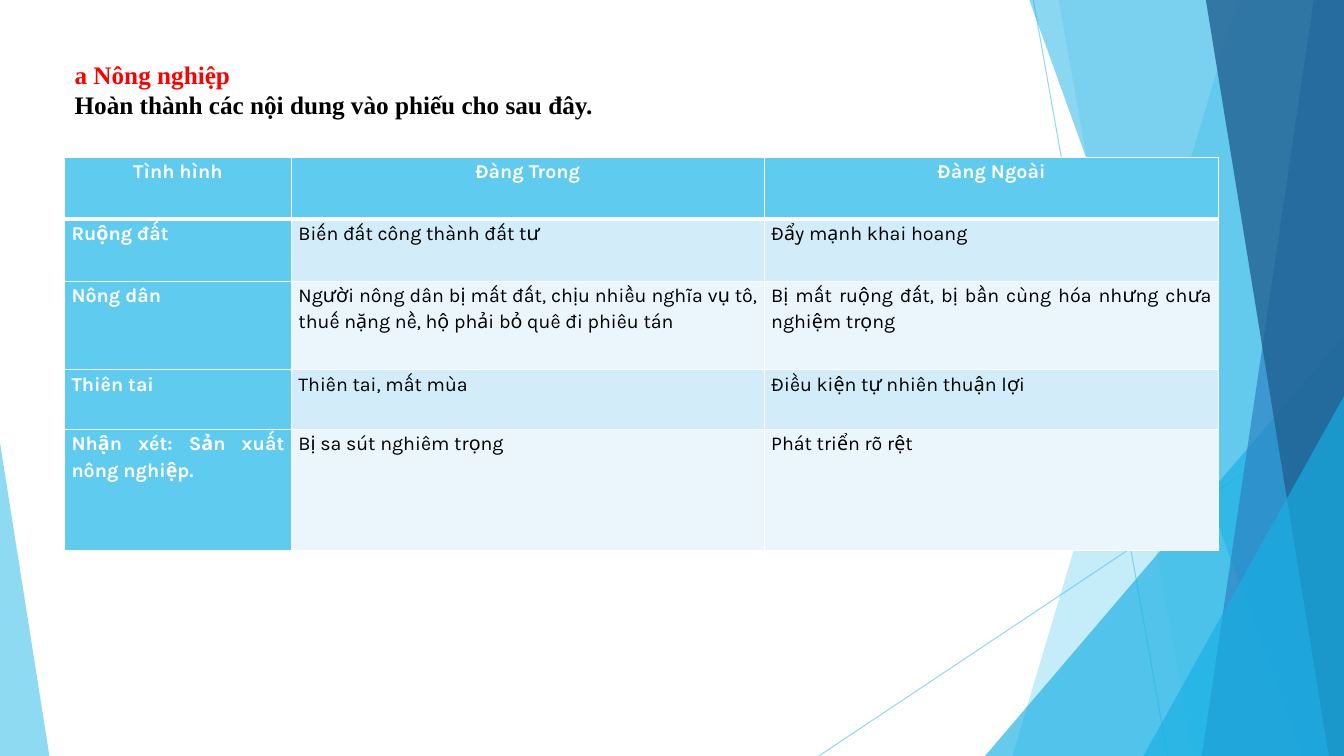
from lxml.etree import SubElement
from pptx import Presentation
from pptx.dml.color import RGBColor
from pptx.enum.shapes import MSO_CONNECTOR, MSO_SHAPE
from pptx.enum.text import MSO_ANCHOR, MSO_AUTO_SIZE, PP_ALIGN
from pptx.oxml.ns import qn
from pptx.util import Inches, Pt

COLORS = {
    "sky": "5FCBEF", "cyan": "17B0E4", "blue": "2E83C3", "navy": "226292",
    "band_dark": "D2ECF9", "band_light": "EAF6FC",
    "white": "FFFFFF", "black": "000000", "red": "FF0000",
}
COLOR = {name: RGBColor.from_string(value) for name, value in COLORS.items()}

deck = Presentation()
deck.slide_width, deck.slide_height = Inches(13.33), Inches(7.5)
slide = deck.slides.add_slide(deck.slide_layouts[5])
shapes = slide.shapes


def at(across, down):
    """Turn percentages of the slide's width and height into lengths."""
    return round(deck.slide_width * across / 100), round(deck.slide_height * down / 100)


def tint(part, fill, color, opacity):
    """Give a part a solid colour with an opacity in percent."""
    fill.solid()
    fill.fore_color.rgb = COLOR[color]
    for tone in part._element.spPr.iter(qn("a:srgbClr")):
        SubElement(tone, qn("a:alpha"), val=str(opacity * 1000))


# Thin rays behind the facets
for start, end in [((76.89, 0), (86.87, 100)), ((100, 53.73), (60.92, 100))]:
    ray = shapes.add_connector(MSO_CONNECTOR.STRAIGHT, *at(*start), *at(*end))
    ray.line.width = Pt(0.75)
    tint(ray, ray.line.fill, "sky", 70)
    SubElement(ray._element.spPr, qn("a:effectLst"))

# Facets: left end at the top, left end at the bottom, top edge, colour, opacity.
# Those starting below the slide's top are right triangles.
facets = [
    (92.12, 75.32, 0, "sky", 36),
    (78.77, 88.75, 0, "sky", 20),
    (100, 73.29, 44.4, "cyan", 66),
    (76.59, 96.85, 0, "cyan", 50),
    (97.75, 89.42, 0, "blue", 70),
    (89.72, 98.87, 0, "navy", 80),
    (100, 85.07, 52.4, "cyan", 66),
    (0, 0, 58.53, "sky", 70),
]
LEFT_FACET_WIDTH = 3.68
for top_left, bottom_left, top, color, opacity in facets:
    if top:
        width = 100 - bottom_left if top_left else LEFT_FACET_WIDTH
        facet = shapes.add_shape(MSO_SHAPE.ISOSCELES_TRIANGLE,
                                 *at(bottom_left, top), *at(width, 100 - top))
        facet.adjustments[0] = 1 if top_left else 0
    else:
        outline = shapes.build_freeform(*at(top_left, 0))
        outline.add_line_segments([at(100, 0), at(100, 100), at(bottom_left, 100)])
        facet = outline.convert_to_shape()
    tint(facet, facet.fill, color, opacity)
    facet.line.fill.background()
    facet.shadow.inherit = False

# Heading
heading = shapes.title
heading.left, heading.top = at(4.8, 7.2)
heading.width, heading.height = at(40.44, 9.47)
heading_format = {"word_wrap": False, "auto_size": MSO_AUTO_SIZE.SHAPE_TO_FIT_TEXT,
                  "vertical_anchor": MSO_ANCHOR.TOP}
for name, value in heading_format.items():
    setattr(heading.text_frame, name, value)
heading.text_frame.text = "a Nông nghiệp\nHoàn thành các nội dung vào phiếu cho sau đây."
for line, color in zip(heading.text_frame.paragraphs, ["red", "black"]):
    line.alignment = PP_ALIGN.LEFT
    for name, value in {"name": "Times New Roman", "size": Pt(18), "bold": True}.items():
        setattr(line.font, name, value)
    line.font.color.rgb = COLOR[color]

# Comparison of the two regions
comparison = [
    ("Tình hình", "Đàng Trong", "Đàng Ngoài"),
    ("Ruộng đất", "Biến đất công thành đất tư", "Đẩy mạnh khai hoang"),
    ("Nông dân",
     "Người nông dân bị mất đất, chịu nhiều nghĩa vụ tô, thuế nặng nề, hộ phải bỏ quê đi phiêu tán",
     "Bị mất ruộng đất, bị bần cùng hóa nhưng chưa nghiệm trọng"),
    ("Thiên tai", "Thiên tai, mất mùa", "Điều kiện tự nhiên thuận lợi"),
    ("Nhận xét: Sản xuất nông nghiệp.", "Bị sa sút nghiêm trọng", "Phát triển rõ rệt"),
]
column_shares = [16.88, 35.18, 33.83]
row_shares = [8.2, 8.2, 11.73, 7.87, 16]
table = shapes.add_table(len(row_shares), len(column_shares), *at(4.8, 20.8),
                         *at(sum(column_shares), sum(row_shares))).table
for column, share in zip(table.columns, column_shares):
    column.width = at(share, 0)[0]
for row, share in zip(table.rows, row_shares):
    row.height = at(0, share)[1]

cell_margins = {"margin_left": Inches(0.07), "margin_right": Inches(0.07),
                "margin_top": 0, "margin_bottom": 0}
for r, texts in enumerate(comparison):
    for c, text in enumerate(texts):
        cell = table.cell(r, c)
        is_label = r == 0 or c == 0
        for name, value in cell_margins.items():
            setattr(cell, name, value)

        for side in ("lnL", "lnR", "lnT", "lnB"):
            thick = (r, side) in [(0, "lnB"), (1, "lnT")]
            border = SubElement(cell._tc.get_or_add_tcPr(), qn(f"a:{side}"),
                                w=str(Pt(3 if thick else 1)))
            SubElement(SubElement(border, qn("a:solidFill")), qn("a:srgbClr"),
                       val=COLORS["white"])
        cell.fill.solid()
        band = "band_dark" if r % 2 else "band_light"
        cell.fill.fore_color.rgb = COLOR["sky" if is_label else band]

        cell.text = text
        paragraph = cell.text_frame.paragraphs[0]
        paragraph_format = {"alignment": PP_ALIGN.JUSTIFY if r else PP_ALIGN.CENTER,
                            "line_spacing": 1.15, "space_after": Pt(10)}
        for name, value in paragraph_format.items():
            setattr(paragraph, name, value)
        font = paragraph.runs[0].font
        for name, value in {"name": "Karla", "size": Pt(14), "bold": is_label}.items():
            setattr(font, name, value)
        font.color.rgb = COLOR["white" if is_label else "black"]

deck.save("out.pptx")
